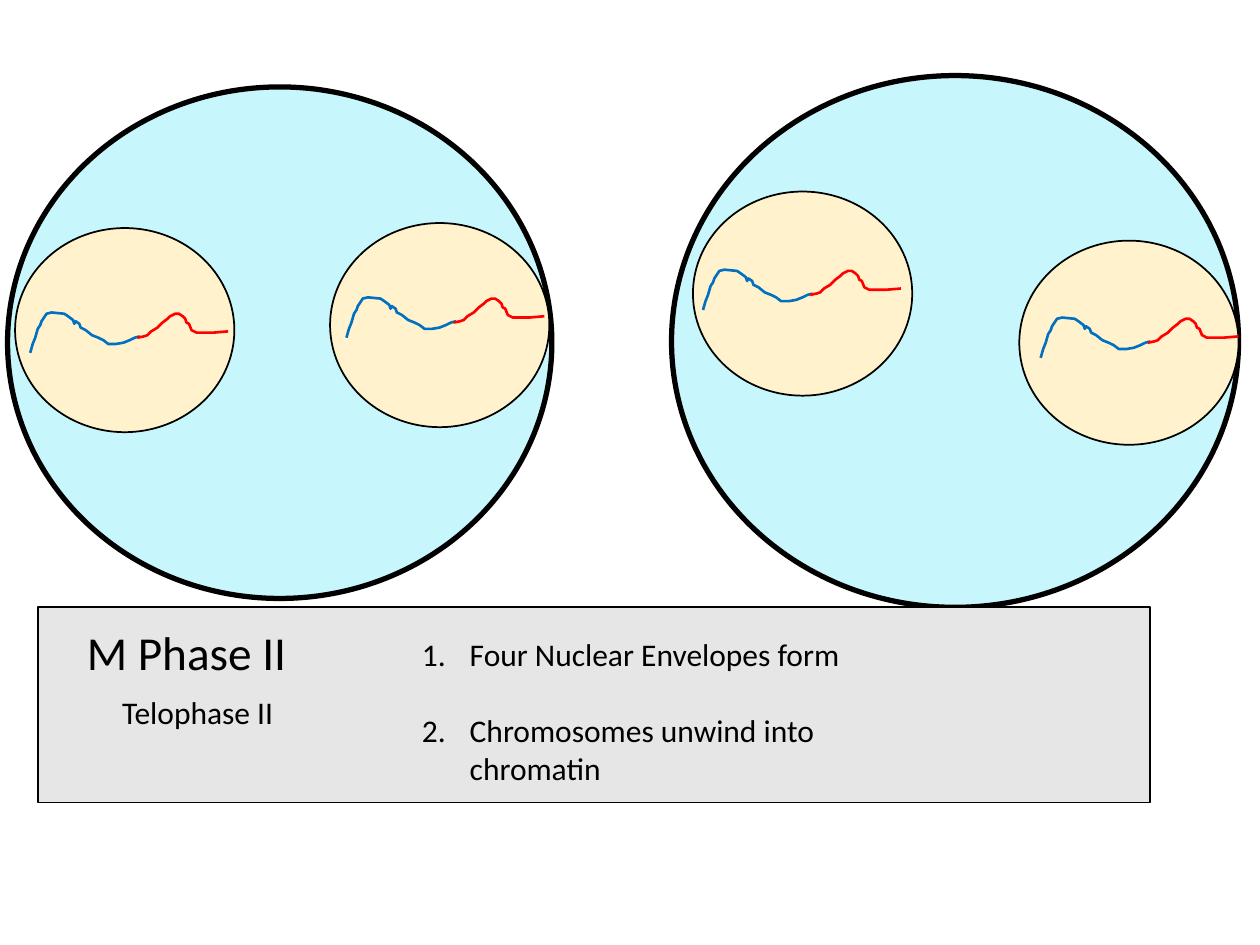
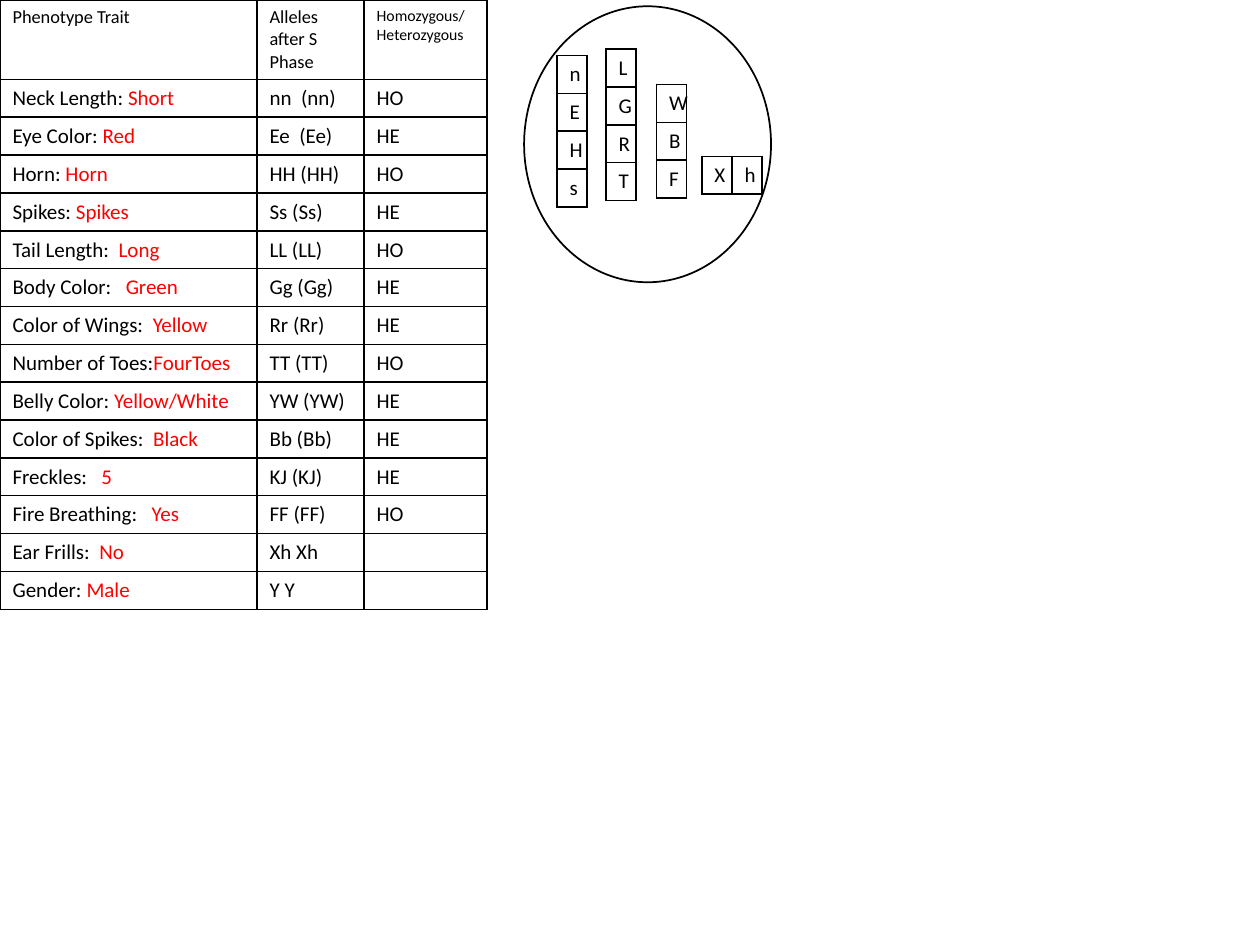
from dataclasses import dataclass

from lxml import etree
from pptx import Presentation
from pptx import util as u
from pptx.dml.color import RGBColor
from pptx.enum import shapes, text
from pptx.oxml import ns

COLORS = {
    "black": "000000",
    "red": "FF0000",
    "blue": "0070C0",
    "cytoplasm": "C7F7FD",
    "nucleus": "FFF2CC",
    "band": "E7E6E6",
    "white": "FFFFFF",
}
FONT = "Calibri"

# The slide is a grid of 100 columns by 75 rows
WIDTH, HEIGHT = u.Inches(10), u.Inches(7.5)
COLUMN, ROW = WIDTH / 100, HEIGHT / 75

NUCLEUS_SIZE = (17.4, 16.2)

# Each cell: box, then for each nucleus its offset and its chromatin's offset
CELLS = [
    ((53.3, 6, 45, 42.2), [((1.7, 9.2), (0.8, 6.2)), ((27.6, 13.1), (1.7, 6.1))]),
    ((0.6, 6.9, 43.2, 40.6), [((25.6, 10.8), (1.3, 5.9)), ((0.6, 11.2), (1.2, 6.7))]),
]

# Chromatin outlines, in tenths of a column from the strand's top left
CHROMATIN = {
    "blue": [(0, 32), (2, 25), (4, 20), (6, 13), (8, 10), (9, 7), (13, 1), (17, 0),
             (27, 1), (30, 3), (34, 6), (35, 9), (36, 7), (39, 9), (40, 12), (44, 14),
             (49, 18), (54, 20), (58, 22), (62, 25), (68, 25), (74, 24), (79, 22),
             (83, 20), (87, 19)],
    "red": [(85, 20), (90, 19), (93, 18), (96, 15), (101, 12), (105, 8), (109, 5),
            (111, 3), (115, 1), (118, 1), (121, 3), (123, 5), (124, 8), (126, 9),
            (128, 14), (132, 16), (145, 15.5), (157, 15)],
}

# Trait, phenotype, alleles, zygosity
TRAITS = [
    ("Neck Length: ", "Short", "nn  (nn)", "HO"),
    ("Eye Color: ", "Red", "Ee  (Ee)", "HE"),
    ("Horn: ", "Horn", "HH (HH)", "HO"),
    ("Spikes: ", "Spikes", "Ss (Ss)", "HE"),
    ("Tail Length:  ", "Long", "LL (LL)", "HO"),
    ("Body Color:   ", "Green", "Gg (Gg)", "HE"),
    ("Color of Wings:  ", "Yellow", "Rr (Rr)", "HE"),
    ("Number of Toes:", "FourToes", "TT (TT)", "HO"),
    ("Belly Color: ", "Yellow/White", "YW (YW)", "HE"),
    ("Color of Spikes:  ", "Black", "Bb (Bb)", "HE"),
    ("Freckles:   ", "5", "KJ (KJ)", "HE"),
    ("Fire Breathing:   ", "Yes", "FF (FF)", "HO"),
    ("Ear Frills:  ", "No", "Xh Xh", ""),
    ("Gender: ", "Male", "Y Y", ""),
]

# Each chromosome: offset in the gamete and its rows of alleles
CHROMOSOMES = [
    ((2.6, 3.9), ["n", "E", "H", "s"]),
    ((6.5, 3.4), ["L", "G", "R", "T"]),
    ((10.5, 6.2), ["W", "B", "F"]),
    ((14.1, 11.9), ["Xh"]),
]


@dataclass
class Box:
    x: float
    y: float
    w: float
    h: float

    def inside(self, x, y, w, h):
        return Box(self.x + x, self.y + y, w, h)

    def lengths(self):
        return [round(n) for n in (self.x * COLUMN, self.y * ROW,
                                   self.w * COLUMN, self.h * ROW)]


def color(name):
    return RGBColor.from_string(COLORS[name])


def write(frame, paragraphs, size=12, align=text.PP_ALIGN.LEFT, gap=0, numbered=False):
    """Each paragraph is a string, or a list of (text, colour name) runs."""
    frame.word_wrap = True
    for index, runs in enumerate(paragraphs):
        paragraph = frame.paragraphs[0] if index == 0 else frame.add_paragraph()
        paragraph.alignment = align
        paragraph.space_after = u.Pt(gap)
        if isinstance(runs, str):
            runs = [(runs, "black")] if runs else []
        for content, name in runs:
            run = paragraph.add_run()
            run.text = content
            run.font.name, run.font.size = FONT, u.Pt(size)
            run.font.color.rgb = color(name)
        if not runs:
            paragraph._p.get_or_add_endParaRPr().set("sz", str(size * 100))
        if numbered:
            properties = paragraph._p.get_or_add_pPr()
            indent = u.Inches(0.38)
            properties.set("marL", str(indent))
            properties.set("indent", str(-indent))
            bullet = etree.SubElement(properties, ns.qn("a:buAutoNum"))
            bullet.set("type", "arabicPeriod")


def add_text(slide, box, paragraphs, **style):
    write(slide.shapes.add_textbox(*box.lengths()).text_frame, paragraphs, **style)


def add_outlined(slide, kind, box, fill, weight=1):
    shape = slide.shapes.add_shape(kind, *box.lengths())
    shape.shadow.inherit = False
    shape.fill.solid()
    shape.fill.fore_color.rgb = color(fill)
    shape.line.color.rgb = color("black")
    shape.line.width = u.Pt(weight)


def add_borders(cell):
    properties = cell._tc.get_or_add_tcPr()
    for position, side in enumerate(("lnL", "lnR", "lnT", "lnB")):
        line = etree.Element(ns.qn("a:" + side), w=str(u.Pt(1)))
        fill = etree.SubElement(line, ns.qn("a:solidFill"))
        etree.SubElement(fill, ns.qn("a:srgbClr"), val=COLORS["black"])
        properties.insert(position, line)


def add_grid(slide, box, columns, rows):
    """Add a plain ruled table and return it."""
    table = slide.shapes.add_table(len(rows), len(columns), *box.lengths()).table
    table.first_row = table.horz_banding = False
    for column, width in zip(table.columns, columns):
        column.width = round(width * COLUMN)
    for row, height in zip(table.rows, rows):
        row.height = round(height * ROW)
    for cell in table.iter_cells():
        cell.fill.background()
        add_borders(cell)
    return table


# Telophase slide: dividing cells
def add_chromatin(slide, box):
    left, top = box.lengths()[:2]
    for name, points in CHROMATIN.items():
        builder = slide.shapes.build_freeform(*points[0], scale=(COLUMN / 10, ROW / 10))
        builder.add_line_segments(points[1:], close=False)
        strand = builder.convert_to_shape(left, top)
        strand.shadow.inherit = False
        strand.fill.background()
        strand.line.color.rgb = color(name)
        strand.line.width = u.Pt(1.5)


def add_cell(slide, box, nuclei):
    oval = shapes.MSO_SHAPE.OVAL
    add_outlined(slide, oval, box, "cytoplasm", weight=3)
    for offset, chromatin_offset in nuclei:
        nucleus = box.inside(*offset, *NUCLEUS_SIZE)
        add_outlined(slide, oval, nucleus, "nucleus")
        add_chromatin(slide, nucleus.inside(*chromatin_offset, 15.7, 3.2))


# Telophase slide: caption band
def add_caption(slide, box):
    add_outlined(slide, shapes.MSO_SHAPE.RECTANGLE, box, "band")
    add_text(slide, box.inside(29.5, 1.7, 39, 17.7),
             ["Four Nuclear Envelopes form", "Chromosomes unwind into chromatin"],
             size=18, gap=22, numbered=True)
    add_text(slide, box.inside(2.9, 0.8, 21.2, 5.6), ["M Phase II"], size=27)
    add_text(slide, box.inside(5.7, 6.3, 21.2, 4), ["Telophase II"], size=18)


# Traits slide: phenotype table
def add_traits(slide, box):
    table = add_grid(slide, box, [20.4, 8.5, 9.75], [6.3] + [3] * len(TRAITS))
    headings = [(["Phenotype Trait"], 10.5), (["Alleles after S Phase"], 10.5),
                (["Homozygous/", "Heterozygous"], 9)]
    for column, (heading, size) in enumerate(headings):
        write(table.cell(0, column).text_frame, heading, size=size)
    for row, (trait, phenotype, alleles, zygosity) in enumerate(TRAITS, start=1):
        contents = [[(trait, "black"), (phenotype, "red")], alleles, zygosity]
        for column, content in enumerate(contents):
            write(table.cell(row, column).text_frame, [content])


# Traits slide: gamete with its chromosomes
def add_gamete(slide, box):
    add_outlined(slide, shapes.MSO_SHAPE.OVAL, box, "white")
    for offset, genes in CHROMOSOMES:
        columns, rows = [2.35] * len(genes[0]), [3] * len(genes)
        table = add_grid(slide, box.inside(*offset, sum(columns), sum(rows)), columns, rows)
        for cell, gene in zip(table.iter_cells(), "".join(genes)):
            write(cell.text_frame, [gene], align=text.PP_ALIGN.CENTER)


def add_telophase_slide(slide):
    for box, nuclei in CELLS:
        add_cell(slide, Box(*box), nuclei)
    add_caption(slide, Box(3, 48.2, 88.3, 15.5))


def add_traits_slide(slide):
    add_traits(slide, Box(0, 0, 38.7, 48.3))
    add_gamete(slide, Box(41.6, 0.5, 19.6, 21.9))


def main():
    presentation = Presentation()
    presentation.slide_width, presentation.slide_height = WIDTH, HEIGHT
    blank = presentation.slide_layouts[6]
    for fill_slide in (add_telophase_slide, add_traits_slide):
        fill_slide(presentation.slides.add_slide(blank))
    presentation.save("out.pptx")


if __name__ == "__main__":
    main()
